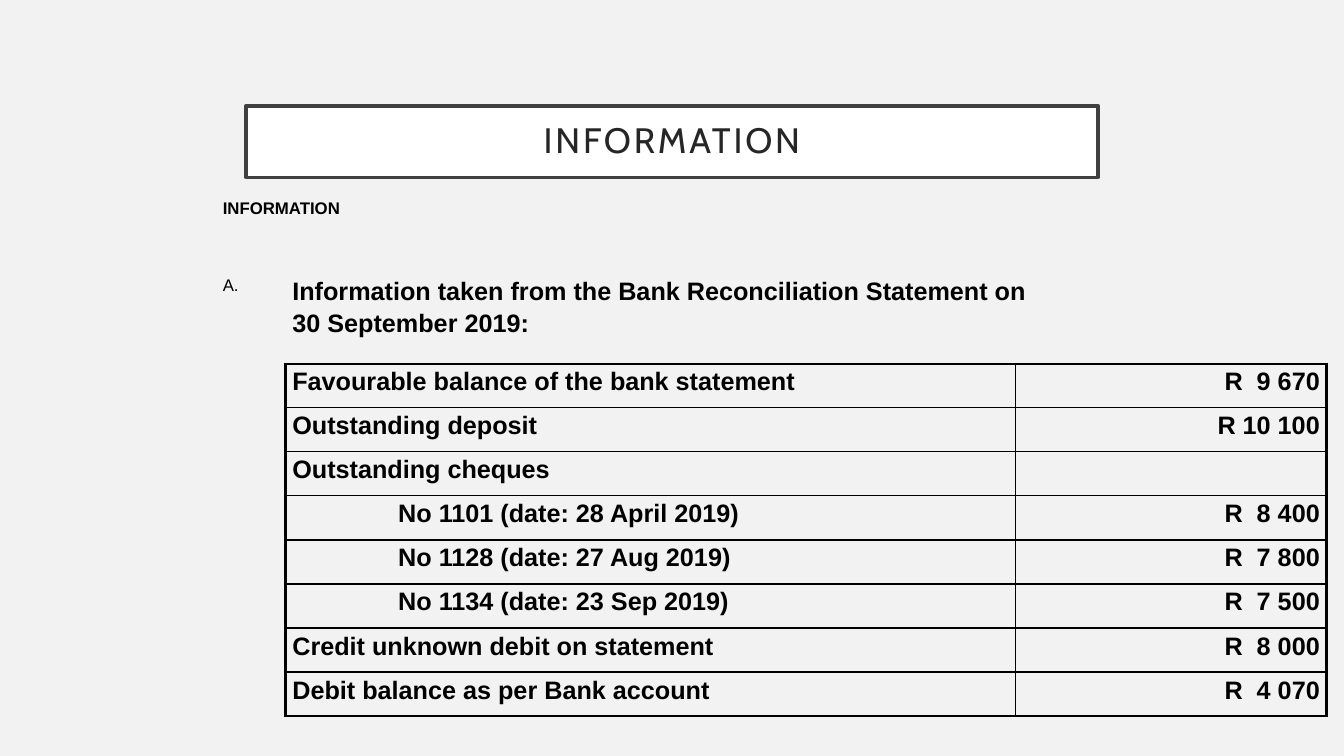
from dataclasses import dataclass

from pptx import Presentation
from pptx.dml.color import RGBColor
from pptx.enum import shapes, text
from pptx.oxml import ns, xmlchemy
from pptx.util import Inches, Pt

ALIGN = text.PP_ALIGN
FIGURE_SPACE = " "


@dataclass(frozen=True)
class Theme:
    background: str = "F2F2F2"
    panel: str = "FFFFFF"
    frame: str = "404040"
    heading: str = "262626"
    ink: str = "000000"
    heading_font: str = "Cabin"
    body_font: str = "Arial"
    heading_size: float = 25.2
    body_size: float = 18
    label_size: float = 12
    thin: float = 1
    thick: float = 2.25


@dataclass(frozen=True)
class Entry:
    label: str
    amount: str = ""
    indented: bool = False


THEME = Theme()
ENTRIES = [
    Entry("Favourable balance of the bank statement", "9 670"),
    Entry("Outstanding deposit", "10 100"),
    Entry("Outstanding cheques"),
    Entry("No 1101 (date: 28 April 2019)", "8 400", indented=True),
    Entry("No 1128 (date: 27 Aug 2019)", "7 800", indented=True),
    Entry("No 1134 (date: 23 Sep 2019)", "7 500", indented=True),
    Entry("Credit unknown debit on statement", "8 000"),
    Entry("Debit balance as per Bank account", "4 070"),
]
COLUMN_WIDTHS = [0.69, 1.05, 6.19, 3.09]
HEADER_HEIGHTS = [0.76, 0.9]
ENTRY_HEIGHT = 0.437
ROW_HEIGHTS = HEADER_HEIGHTS + [ENTRY_HEIGHT] * len(ENTRIES)
FIRST = len(HEADER_HEIGHTS)
LAST = len(ROW_HEIGHTS)


def write(tf, content: str, *, size: float = THEME.body_size, bold: bool = True,
          font: str = THEME.body_font, color: str = THEME.ink, align=ALIGN.LEFT,
          line_spacing: float = 1.15, tracking: int = 0) -> None:
    for i, line in enumerate(content.split("\n")):
        p = tf.paragraphs[0] if i == 0 else tf.add_paragraph()
        p.alignment = align
        p.line_spacing = line_spacing
        r = p.add_run()
        r.text = line
        r.font.size = Pt(size)
        r.font.bold = bold
        r.font.name = font
        r.font.color.rgb = RGBColor.from_string(color)
        if tracking:
            r.font._element.set("spc", str(tracking))


def draw_title(s) -> None:
    sp = s.shapes.add_shape(shapes.MSO_SHAPE.RECTANGLE,
                            Inches(2.44), Inches(1.05), Inches(8.45), Inches(0.71))
    sp.shadow.inherit = False
    sp.fill.solid()
    sp.fill.fore_color.rgb = RGBColor.from_string(THEME.panel)
    sp.line.color.rgb = RGBColor.from_string(THEME.frame)
    sp.line.width = Pt(2.5)
    tf = sp.text_frame
    tf.word_wrap = True
    tf.vertical_anchor = text.MSO_ANCHOR.MIDDLE
    tf.margin_left = tf.margin_right = tf.margin_top = tf.margin_bottom = Inches(0.2)
    write(tf, "INFORMATION", size=THEME.heading_size, bold=False, font=THEME.heading_font,
          color=THEME.heading, align=ALIGN.CENTER, line_spacing=0.9, tracking=200)


def vertical_rule(row: int, edge: int) -> float:
    if row < FIRST:
        return 0
    return {1: THEME.thick, 3: THEME.thin, 4: THEME.thick}.get(edge, 0)


def horizontal_rule(edge: int, col: int) -> float:
    if edge < FIRST or col == 0:
        return 0
    return THEME.thick if edge in (FIRST, LAST) else THEME.thin


def set_border(tc_pr, position: int, tag: str, width: float) -> None:
    ln = xmlchemy.OxmlElement(tag)
    ln.set("w", str(Pt(width)))
    fill = xmlchemy.OxmlElement("a:solidFill" if width else "a:noFill")
    if width:
        color = xmlchemy.OxmlElement("a:srgbClr")
        color.set("val", THEME.ink)
        fill.append(color)
    ln.append(fill)
    tc_pr.insert(position, ln)


def style_cell(cell, row: int, col: int) -> None:
    cell.margin_left = cell.margin_right = Inches(0.07)
    cell.margin_top = cell.margin_bottom = 0
    cell.fill.background()
    borders = {
        "a:lnL": vertical_rule(row, col),
        "a:lnR": vertical_rule(row, col + 1),
        "a:lnT": horizontal_rule(row, col),
        "a:lnB": horizontal_rule(row + 1, col),
    }
    tc_pr = cell._tc.find(ns.qn("a:tcPr"))
    for position, (tag, width) in enumerate(borders.items()):
        set_border(tc_pr, position, tag, width)


def draw_statement(s) -> None:
    table = s.shapes.add_table(LAST, len(COLUMN_WIDTHS), Inches(2.14), Inches(1.95),
                               Inches(sum(COLUMN_WIDTHS)), Inches(sum(ROW_HEIGHTS))).table
    table.first_row = table.horz_banding = False
    for column, width in zip(table.columns, COLUMN_WIDTHS):
        column.width = Inches(width)
    for row, height in enumerate(ROW_HEIGHTS):
        table.rows[row].height = Inches(height)
        for col in range(len(COLUMN_WIDTHS)):
            style_cell(table.cell(row, col), row, col)

    table.cell(0, 0).merge(table.cell(0, 3))
    table.cell(1, 1).merge(table.cell(1, 3))
    write(table.cell(0, 0).text_frame, "INFORMATION", size=THEME.label_size)
    write(table.cell(1, 0).text_frame, "A.", size=THEME.label_size, bold=False)
    write(table.cell(1, 1).text_frame,
          "Information taken from the Bank Reconciliation Statement on\n30 September 2019:",
          align=ALIGN.JUSTIFY)

    for row, entry in enumerate(ENTRIES, FIRST):
        if not entry.indented:
            table.cell(row, 1).merge(table.cell(row, 2))
        write(table.cell(row, 2 if entry.indented else 1).text_frame, entry.label)
        if entry.amount:
            write(table.cell(row, 3).text_frame,
                  f"R {entry.amount.rjust(6, FIGURE_SPACE)}", align=ALIGN.RIGHT)


def main() -> None:
    prs = Presentation()
    prs.slide_width, prs.slide_height = Inches(13.33), Inches(7.5)
    s = prs.slides.add_slide(prs.slide_layouts[6])
    s.background.fill.solid()
    s.background.fill.fore_color.rgb = RGBColor.from_string(THEME.background)
    draw_title(s)
    draw_statement(s)
    prs.save("out.pptx")


if __name__ == "__main__":
    main()
